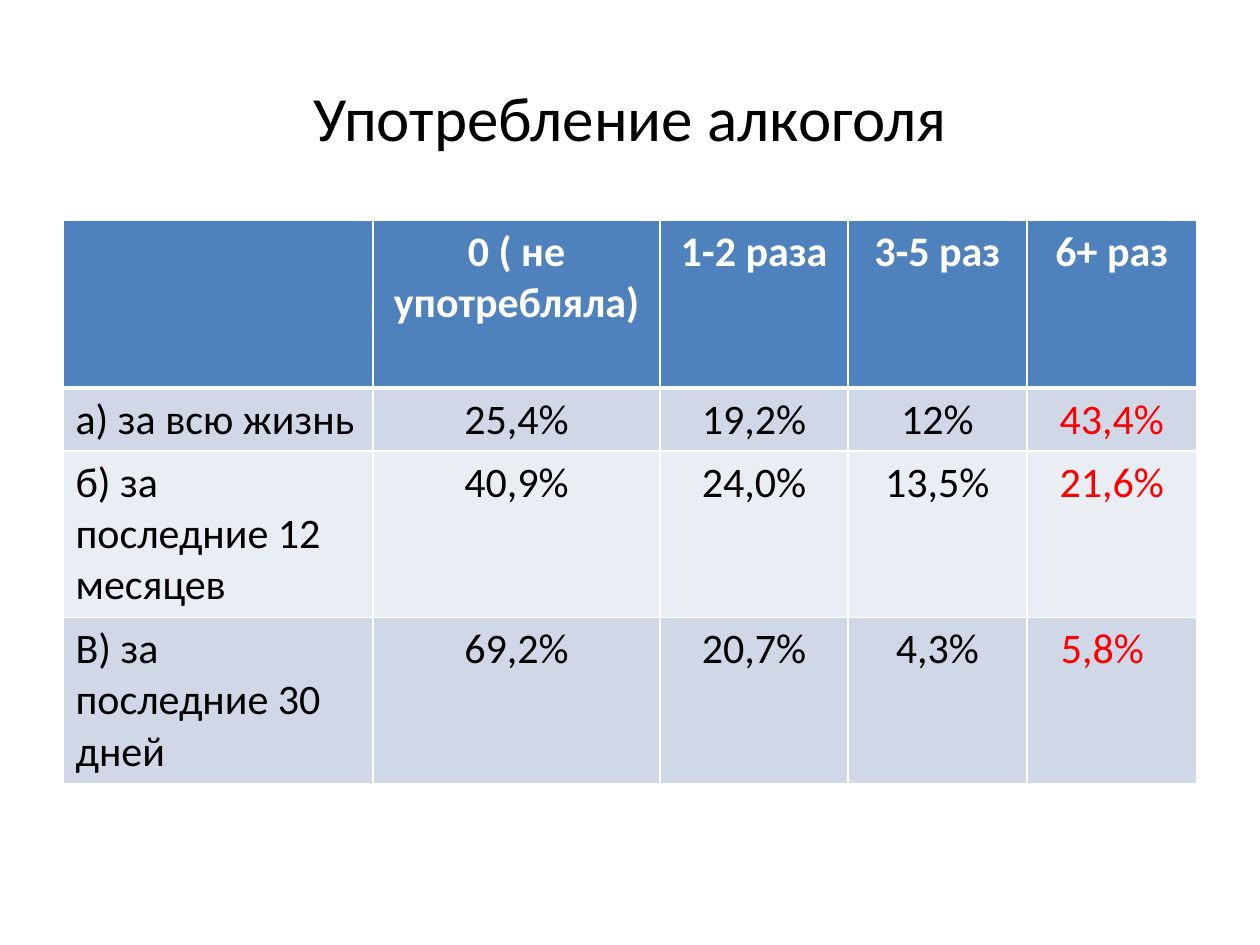
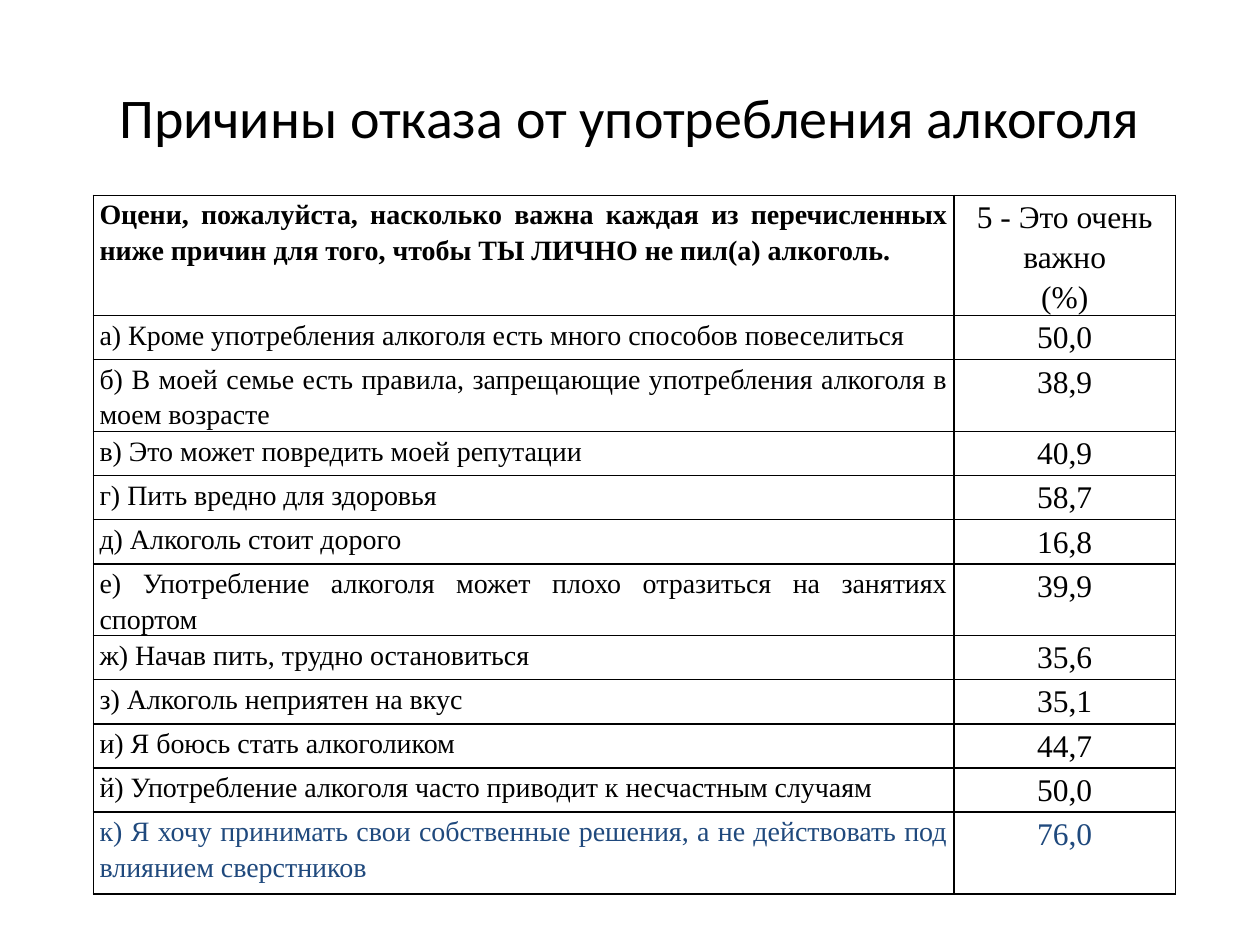
from lxml import etree
from pptx import Presentation
from pptx.dml.color import RGBColor
from pptx.enum.text import MSO_ANCHOR, PP_ALIGN
from pptx.oxml.ns import qn
from pptx.util import Inches, Pt

COLORS = {
    "black": "000000", "white": "FFFFFF", "red": "FF0000", "navy": "1F497D",
    "header": "4F81BD", "odd": "D0D8E8", "even": "E9EDF4",
}


def add_text(para, text, font, size, color, align, bold=False):
    para.alignment = align
    span = para.add_run()
    span.text = text
    span.font.name = font
    span.font.size = Pt(size)
    span.font.bold = bold
    span.font.color.rgb = RGBColor.from_string(COLORS[color])


def set_borders(cell, color, widths):
    properties = cell._tc.get_or_add_tcPr()
    for index, (side, width) in enumerate(zip("LRTB", widths)):
        line = etree.Element(qn(f"a:ln{side}"), w=str(Pt(width)))
        fill = etree.SubElement(line, qn("a:solidFill"))
        etree.SubElement(fill, qn("a:srgbClr"), val=COLORS[color])
        properties.insert(index, line)


deck = Presentation()
deck.slide_width, deck.slide_height = Inches(10), Inches(7.5)

# Content of both slides
frequency_rows = [
    ["", "0 ( не употребляла)", "1-2 раза", "3-5 раз", "6+ раз"],
    ["а) за всю жизнь", "25,4%", "19,2%", "12%", "43,4%"],
    ["б) за последние 12 месяцев", "40,9%", "24,0%", "13,5%", "21,6%"],
    ["В) за последние 30 дней", "69,2%", "20,7%", "4,3%", "5,8%"],
]
reason_rows = [
    ["Оцени, пожалуйста, насколько важна каждая из перечисленных ниже причин "
     "для того, чтобы ТЫ ЛИЧНО не пил(а) алкоголь.", "5 - Это очень важно\n(%)"],
    ["а) Кроме употребления алкоголя есть много способов повеселиться", "50,0"],
    ["б) В моей семье есть правила, запрещающие употребления алкоголя "
     "в моем возрасте", "38,9"],
    ["в) Это может повредить моей репутации", "40,9"],
    ["г) Пить вредно для здоровья", "58,7"],
    ["д) Алкоголь стоит дорого", "16,8"],
    ["е) Употребление алкоголя может плохо отразиться на занятиях спортом", "39,9"],
    ["ж) Начав пить, трудно остановиться", "35,6"],
    ["з) Алкоголь неприятен на вкус", "35,1"],
    ["и) Я боюсь стать алкоголиком", "44,7"],
    ["й) Употребление алкоголя часто приводит к несчастным случаям", "50,0"],
    ["к) Я хочу принимать свои собственные решения, а не действовать "
     "под влиянием сверстников", "76,0"],
]
slides = [
    ("Употребление алкоголя", 36, frequency_rows, (0.5, 1.75),
     [2.46, 2.28, 1.49, 1.42, 1.35], [1.33, 0.5, 1.32, 1.32]),
    ("Причины отказа от употребления алкоголя", 32, reason_rows, (0.74, 1.55),
     [6.83, 1.76], [0.95, 0.35, 0.57] + [0.35] * 3 + [0.57] + [0.35] * 4 + [0.65]),
]

# Title and empty table grid on each slide
tables = []
for title, title_size, rows, (left, top), widths, heights in slides:
    page = deck.slides.add_slide(deck.slide_layouts[6])
    box = page.shapes.add_textbox(Inches(0.5), Inches(0.3), Inches(9), Inches(1.25))
    box.text_frame.word_wrap = True
    box.text_frame.vertical_anchor = MSO_ANCHOR.MIDDLE
    add_text(box.text_frame.paragraphs[0], title, "Calibri", title_size,
             "black", PP_ALIGN.CENTER)

    table = page.shapes.add_table(
        len(rows), len(widths), Inches(left), Inches(top),
        Inches(sum(widths)), Inches(sum(heights))).table
    table.first_row = table.horz_banding = False
    for column, width in zip(table.columns, widths):
        column.width = Inches(width)
    for row, height in zip(table.rows, heights):
        row.height = Inches(height)
    tables.append(table)
frequency_table, reason_table = tables

# Frequency table: blue header, banded rows, last column in red
for row_index, row in enumerate(frequency_rows):
    is_header = row_index == 0
    band = "header" if is_header else "odd" if row_index % 2 else "even"
    for column_index, text in enumerate(row):
        cell = frequency_table.cell(row_index, column_index)
        cell.fill.solid()
        cell.fill.fore_color.rgb = RGBColor.from_string(COLORS[band])
        top_width = 3 if row_index == 1 else 1
        set_borders(cell, "white", [1, 1, top_width, 3 if is_header else 1])
        if not text:
            continue
        is_last = column_index == len(row) - 1
        color = "white" if is_header else "red" if is_last else "black"
        align = PP_ALIGN.CENTER if column_index else PP_ALIGN.LEFT
        add_text(cell.text_frame.paragraphs[0], text, "Calibri", 24,
                 color, align, is_header)
frequency_table.cell(3, 4).margin_right = Inches(0.25)

# Reasons table: black grid, last reason highlighted
for row_index, row in enumerate(reason_rows):
    color = "navy" if row_index == len(reason_rows) - 1 else "black"
    for column_index, text in enumerate(row):
        cell = reason_table.cell(row_index, column_index)
        cell.fill.background()
        set_borders(cell, "black", [1] * 4)
        cell.margin_left = cell.margin_right = Inches(0.05)
        cell.margin_top = cell.margin_bottom = 0
        size, pitch, align = ((18, 22.9, PP_ALIGN.CENTER) if column_index
                              else (16, 20.4, PP_ALIGN.JUSTIFY))
        for line_index, line in enumerate(text.split("\n")):
            frame = cell.text_frame
            para = frame.add_paragraph() if line_index else frame.paragraphs[0]
            para.line_spacing = Pt(pitch)
            add_text(para, line, "Times New Roman", size, color, align,
                     row_index == column_index == 0)

deck.save("out.pptx")
